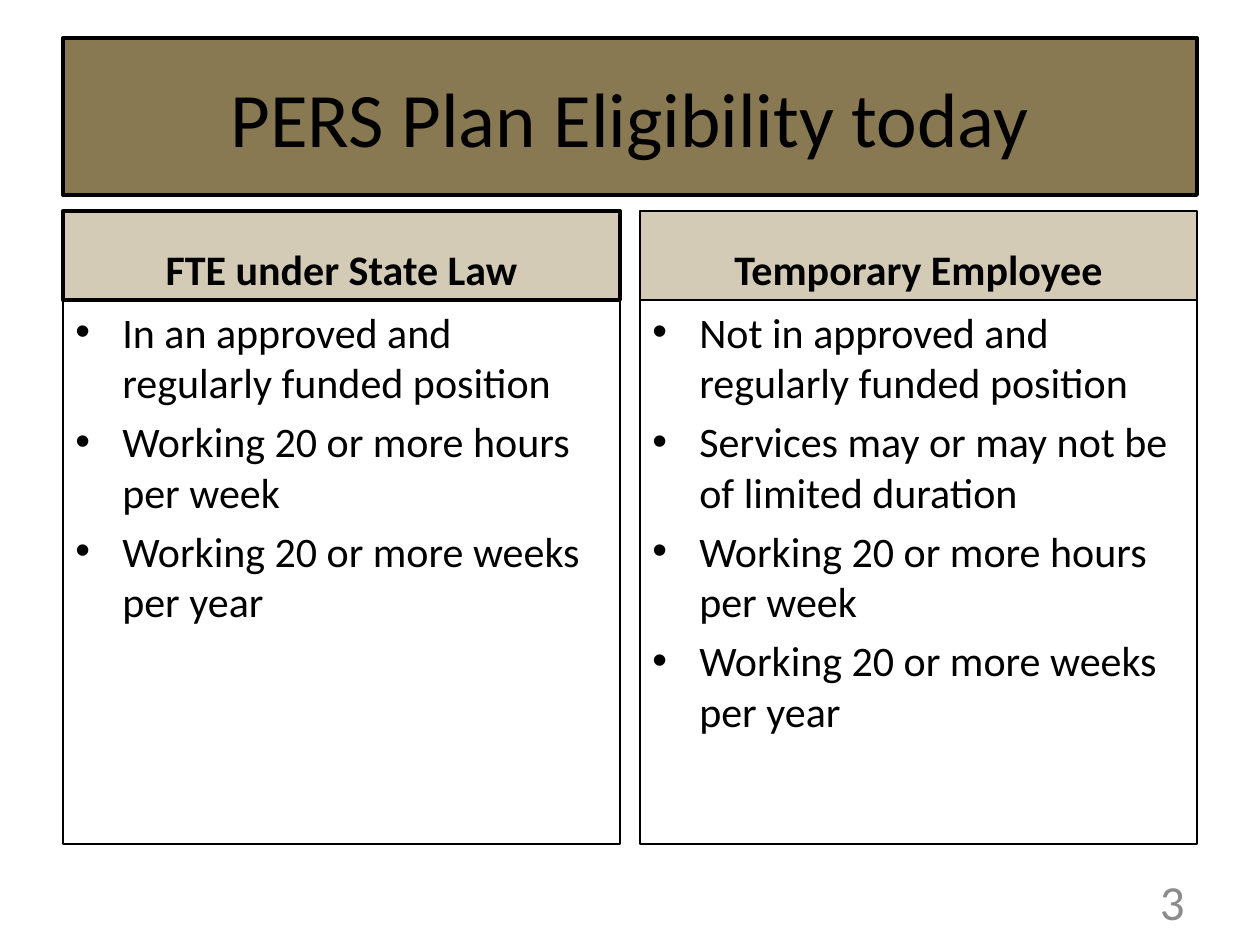
from lxml import etree
from pptx import Presentation, util as u
from pptx.dml.color import RGBColor
from pptx.enum import shapes, text
from pptx.oxml.ns import qn

TITLE = "PERS Plan Eligibility today"
PAGE_NUMBER = "3"
# heading, heading border in points, criteria
COLUMNS = [
    ("FTE under State Law", 2.25, [
        "In an approved and regularly funded position",
        "Working 20 or more hours per week",
        "Working 20 or more weeks per year",
    ]),
    ("Temporary Employee", 1.5, [
        "Not in approved and regularly funded position",
        "Services may or may not be of limited duration",
        "Working 20 or more hours per week",
        "Working 20 or more weeks per year",
    ]),
]

FONT = "Calibri"
BLACK = RGBColor(0x00, 0x00, 0x00)
GREY = RGBColor(0x8C, 0x8C, 0x8C)
BRONZE = RGBColor(0x88, 0x79, 0x52)
SAND = RGBColor(0xD3, 0xCB, 0xB6)

SLIDE_W, SLIDE_H = 1260, 945
MARGIN, GAP = 63, 20
CONTENT_W = SLIDE_W - 2 * MARGIN
COLUMN_W = (CONTENT_W - GAP) // 2
TITLE_Y, TITLE_H = 38, 157
HEADING_Y, HEADING_H = 211, 89
CRITERIA_Y, CRITERIA_H = HEADING_Y + HEADING_H, 544
NUMBER_Y, NUMBER_W, NUMBER_H = 876, 294, 50
BULLET_INDENT = 47

ALIGN = text.PP_ALIGN
ANCHOR = text.MSO_ANCHOR


def px(length):
    return u.Emu(round(length * 914400 / 126))


def write(shape, lines, size, align, anchor, color=BLACK, bold=False, before=0):
    frame = shape.text_frame
    frame.word_wrap = True
    frame.vertical_anchor = anchor
    frame.text = "\n".join(lines)
    for paragraph in frame.paragraphs:
        paragraph.alignment = align
        paragraph.space_before = u.Pt(before)
        font = paragraph.font
        font.name, font.size, font.bold = FONT, u.Pt(size), bold
        font.color.rgb = color


def add_box(slide, x, y, w, h, border, fill=None):
    box = slide.shapes.add_shape(shapes.MSO_SHAPE.RECTANGLE, px(x), px(y), px(w), px(h))
    box.shadow.inherit = False
    if fill is None:
        box.fill.background()
    else:
        box.fill.solid()
        box.fill.fore_color.rgb = fill
    box.line.color.rgb = BLACK
    box.line.width = u.Pt(border)
    return box


def add_bullets(shape):
    for paragraph in shape.text_frame.paragraphs:
        properties = paragraph._p.get_or_add_pPr()
        properties.set("marL", str(px(BULLET_INDENT)))
        properties.set("indent", str(-px(BULLET_INDENT)))
        bullet_font = etree.Element(qn("a:buFont"), typeface="Arial")
        bullet = etree.Element(qn("a:buChar"), char="•")
        spacing = properties.find(qn("a:spcBef"))
        spacing.addnext(bullet_font)
        bullet_font.addnext(bullet)


def main():
    deck = Presentation()
    deck.slide_width, deck.slide_height = px(SLIDE_W), px(SLIDE_H)
    slide = deck.slides.add_slide(deck.slide_layouts[6])

    title = add_box(slide, MARGIN, TITLE_Y, CONTENT_W, TITLE_H, 2.25, BRONZE)
    write(title, [TITLE], 44, ALIGN.CENTER, ANCHOR.MIDDLE)

    for i, (heading_text, heading_border, criteria_lines) in enumerate(COLUMNS):
        x = MARGIN + i * (COLUMN_W + GAP)
        heading = add_box(slide, x, HEADING_Y, COLUMN_W, HEADING_H, heading_border, SAND)
        write(heading, [heading_text], 24, ALIGN.CENTER, ANCHOR.BOTTOM, bold=True, before=5)
        criteria = add_box(slide, x, CRITERIA_Y, COLUMN_W, CRITERIA_H, 1.5)
        write(criteria, criteria_lines, 24, ALIGN.LEFT, ANCHOR.TOP, before=5)
        add_bullets(criteria)

    number = slide.shapes.add_textbox(
        px(SLIDE_W - MARGIN - NUMBER_W), px(NUMBER_Y), px(NUMBER_W), px(NUMBER_H))
    write(number, [PAGE_NUMBER], 28, ALIGN.RIGHT, ANCHOR.MIDDLE, GREY)

    deck.save("out.pptx")


if __name__ == "__main__":
    main()
